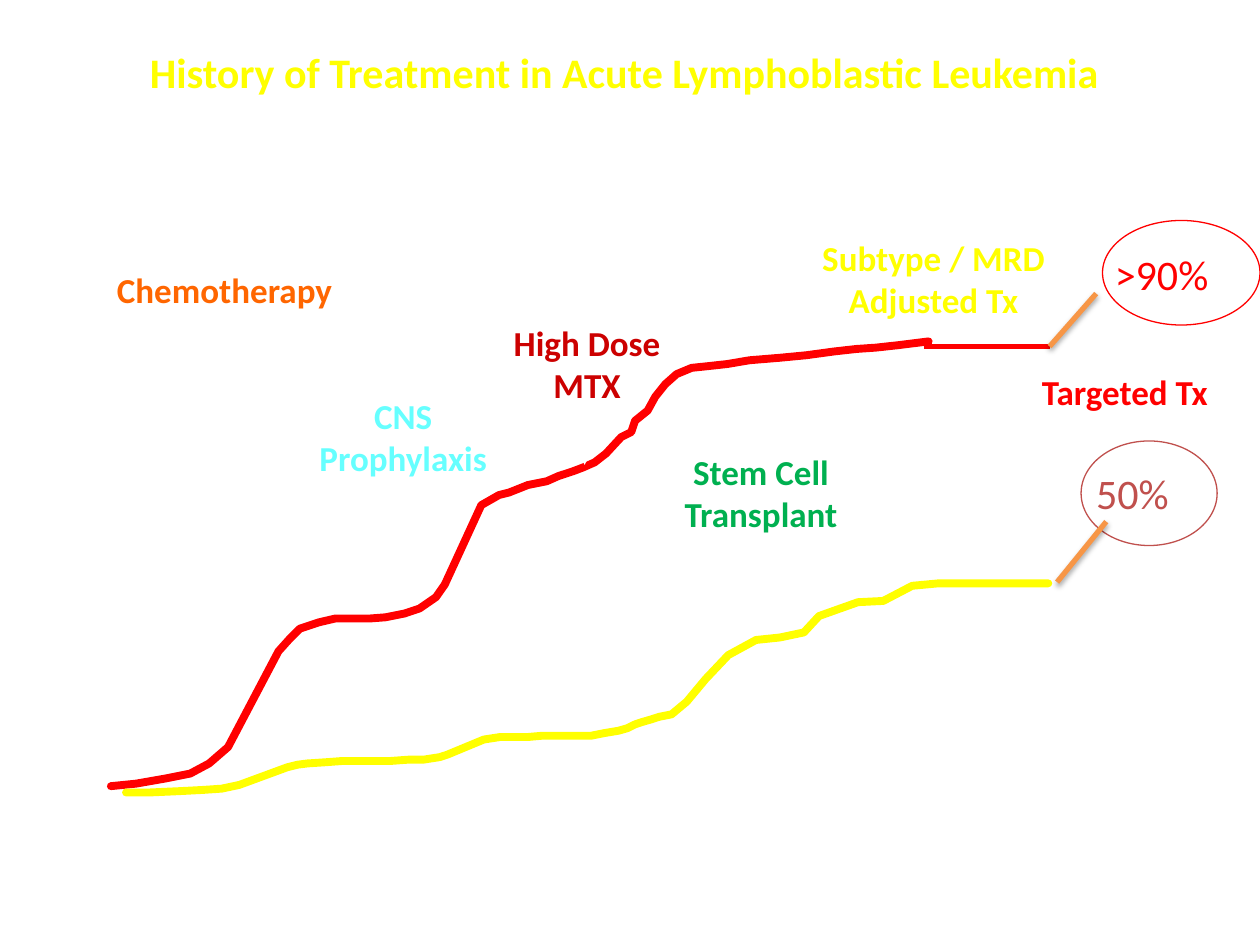
import pptx
import pptx.dml.color
import pptx.enum.shapes
import pptx.enum.text
import pptx.oxml
import pptx.oxml.ns
import pptx.util

RGB = pptx.dml.color.RGBColor
ALIGN = pptx.enum.text.PP_ALIGN
WHITE = RGB(0xFF, 0xFF, 0xFF)
YELLOW = RGB(0xFF, 0xFF, 0x00)
RED = RGB(0xFF, 0x00, 0x00)
DARK_RED = RGB(0xCC, 0x00, 0x00)
BRICK = RGB(0xC0, 0x50, 0x4D)
ORANGE = RGB(0xFF, 0x66, 0x00)
AMBER = RGB(0xF7, 0x96, 0x46)
CYAN = RGB(0x66, 0xFF, 0xFF)
GREEN = RGB(0x00, 0xB0, 0x50)

COLUMNS, ROWS = 100, 75
CELL = pptx.util.Inches(0.1)
NAMESPACE = pptx.oxml.ns.nsdecls("a")

TITLE_BOX = (4.7, 2.4, 89.7, 5.8)
PLOT_BOX = (8, 20, 80, 43)
LABEL_BOX = (8, 18, 92, 25)
OUTCOME_BOX = (83, 17.5, 17, 29)

CHILD_SURVIVAL = [
    (0.8, 42.4), (2.8, 42.2), (5.1, 41.8), (7.1, 41.4), (8.6, 40.6), (10.1, 39.3),
    (14.1, 31.7), (15, 30.7), (15.8, 29.9), (17.3, 29.4), (18.6, 29.1), (21.3, 29.1),
    (22.6, 29), (24.1, 28.7), (25.3, 28.3), (26.6, 27.4), (27.3, 26.4), (30.2, 20.1),
    (31.6, 19.3), (32.4, 19.1), (33.9, 18.5), (35.4, 18.2), (36.3, 17.8), (37.5, 17.4),
    (38.3, 17.1), (39.2, 16.7), (40.1, 16), (41.3, 14.7), (42.1, 14.3), (42.4, 13.4),
    (43.4, 12.6), (44, 11.5), (44.8, 10.5), (45.7, 9.7), (46.9, 9.2), (47.9, 9.1),
    (49.7, 8.9), (51.5, 8.6), (53.9, 8.4), (56, 8.2), (58.2, 7.9), (60, 7.7),
    (61.5, 7.6), (63.3, 7.4), (65.7, 7.1),
]
ADULT_SURVIVAL = [
    (2, 42.9), (3.9, 42.9), (6.2, 42.8), (8.1, 42.7), (9.6, 42.6), (11, 42.3),
    (14.8, 40.9), (15.6, 40.7), (16.4, 40.6), (17.9, 40.5), (19.2, 40.4), (23, 40.4),
    (24.4, 40.3), (25.6, 40.3), (26.9, 40.1), (27.5, 39.9), (30.4, 38.7), (31.7, 38.5),
    (33.9, 38.5), (35, 38.4), (38.9, 38.4), (39.9, 38.2), (41.1, 38), (41.8, 37.8),
    (42.4, 37.5), (43, 37.3), (43.7, 37.1), (44.3, 36.9), (45.3, 36.7), (46.5, 35.7),
    (48, 33.9), (49.8, 32), (52, 30.8), (53.9, 30.6), (55.8, 30.2), (57, 28.9),
    (58.4, 28.4), (60.1, 27.8), (62.1, 27.7), (64.4, 26.5), (66.5, 26.3), (75.2, 26.3),
]


def grid(*cells):
    """Turn counts of grid cells into whole lengths."""
    return [pptx.util.Emu(round(count * CELL)) for count in cells]


def within(box, column, row):
    """Return the slide position of a cell counted from the corner of a box."""
    return grid(box[0] + column, box[1] + row)


def write(frame, text, size, color, bold, align):
    """Fill a text frame and format all its runs."""
    frame.text = text
    frame.word_wrap = True
    frame.auto_size = pptx.enum.text.MSO_AUTO_SIZE.NONE
    frame.vertical_anchor = pptx.enum.text.MSO_ANCHOR.TOP
    frame.margin_left = frame.margin_right = pptx.util.Inches(0.1)
    for paragraph in frame.paragraphs:
        paragraph.alignment = align
        for run in paragraph.runs:
            run.font.name, run.font.size = "Calibri", pptx.util.Pt(size)
            run.font.bold, run.font.color.rgb = bold, color


def add_label(shapes, box, area, text, color, size=20, bold=True, align=ALIGN.CENTER):
    """Place a text label in an area of a box."""
    column, row, width, height = area
    label = shapes.add_textbox(*within(box, column, row), *grid(width, height))
    write(label.text_frame, text, size, color, bold, align)


def add_line(shapes, box, start, end, color, weight, arrow=False, shadow=False):
    """Draw a straight line between two cells of a box."""
    line = shapes.add_connector(pptx.enum.shapes.MSO_CONNECTOR.STRAIGHT,
                                *within(box, *start), *within(box, *end))
    line.line.color.rgb, line.line.width = color, pptx.util.Pt(weight)
    if arrow:
        line.line._get_or_add_ln().append(
            pptx.oxml.parse_xml(f'<a:tailEnd {NAMESPACE} type="triangle"/>'))
    cast = ('<a:outerShdw blurRad="39370" dist="22860" dir="5400000" rotWithShape="0">'
            '<a:srgbClr val="000000"><a:alpha val="35000"/></a:srgbClr></a:outerShdw>')
    line._element.spPr.append(pptx.oxml.parse_xml(
        f'<a:effectLst {NAMESPACE}>{cast if shadow else ""}</a:effectLst>'))


def add_curve(shapes, box, points, color, weight):
    """Draw an open curve through cells of a box."""
    first, *others = [within(box, *point) for point in points]
    builder = shapes.build_freeform(*first)
    builder.add_line_segments(others, close=False)
    curve = builder.convert_to_shape()
    curve.shadow.inherit = False
    curve.fill.background()
    curve.line.color.rgb, curve.line.width = color, pptx.util.Pt(weight)
    curve.line._get_or_add_ln().set("cap", "rnd")


def add_title(slide, box):
    """Move and format the slide title."""
    title = slide.shapes.title
    title.left, title.top, title.width, title.height = grid(*box)
    write(title.text_frame, "History of Treatment in Acute Lymphoblastic Leukemia",
          24, YELLOW, True, ALIGN.CENTER)
    title.text_frame.paragraphs[0].line_spacing = 1.2


def add_plot(shapes, box):
    """Draw the axes and the two survival curves."""
    add_line(shapes, box, (0.7, 43), (80.2, 43), WHITE, 1)
    add_line(shapes, box, (0.5, 42.6), (0.5, 0.1), WHITE, 1)
    add_curve(shapes, box, CHILD_SURVIVAL, RED, 4.5)
    add_curve(shapes, box, ADULT_SURVIVAL, YELLOW, 4.5)
    add_line(shapes, box, (65.3, 7.5), (75.3, 7.5), RED, 3)


def add_treatments(shapes, box):
    """Label the treatment eras and point at the curve."""
    add_label(shapes, box, (0.3, 2.8, 21.3, 4.2), "Chemotherapy", ORANGE, align=ALIGN.LEFT)
    add_label(shapes, box, (30.8, 7, 15.6, 7.6), "High Dose\nMTX", DARK_RED)
    add_label(shapes, box, (44.4, 17.3, 16, 7.6), "Stem Cell\nTransplant", GREEN)
    add_label(shapes, box, (55.3, 0.3, 21.6, 7.6), "Subtype / MRD\nAdjusted Tx", YELLOW)
    add_label(shapes, box, (73.7, 10.9, 17.8, 4.3), "Targeted Tx", RED, align=ALIGN.LEFT)
    for column, row in ((5.7, 11), (11.1, 11.2), (38.4, 13.7)):
        add_line(shapes, box, (column, row), (column, row + 5.2), WHITE, 1, arrow=True)
    prophylaxis = shapes.add_group_shape().shapes
    add_line(prophylaxis, box, (24.2, 20.2), (24.2, 24), WHITE, 1, arrow=True)
    add_label(prophylaxis, box, (15.2, 12.8, 17.6, 7.6), "CNS\nProphylaxis", CYAN)


def add_outcome(shapes, box, rate, color, ring_area, rate_area, stem):
    """Draw a ringed survival rate with a stem to its curve."""
    add_label(shapes, box, rate_area, rate, color, 24, False, ALIGN.LEFT)
    column, row, width, height = ring_area
    ring = shapes.add_shape(pptx.enum.shapes.MSO_SHAPE.OVAL,
                            *within(box, column, row), *grid(width, height))
    ring.shadow.inherit = False
    ring.fill.background()
    ring.line.color.rgb, ring.line.width = color, pptx.util.Pt(0.75)
    add_line(shapes, box, *stem, AMBER, 3, shadow=True)


def main():
    """Build and save the slide."""
    deck = pptx.Presentation()
    deck.slide_width, deck.slide_height = grid(COLUMNS, ROWS)
    slide = deck.slides.add_slide(deck.slide_layouts.get_by_name("Title Only"))
    add_title(slide, TITLE_BOX)
    add_plot(slide.shapes, PLOT_BOX)
    add_treatments(slide.shapes, LABEL_BOX)
    add_outcome(slide.shapes, OUTCOME_BOX, ">90%", RED, (4.5, 0, 12.5, 8.3),
                (4.5, 1.7, 10.7, 5), ((0.3, 10), (4, 5.8)))
    add_outcome(slide.shapes, OUTCOME_BOX, "50%", BRICK, (2.8, 17.5, 10.8, 8.3),
                (3, 19.1, 8.8, 5), ((0.9, 28.7), (4.8, 23.9)))
    deck.save("out.pptx")


if __name__ == "__main__":
    main()
